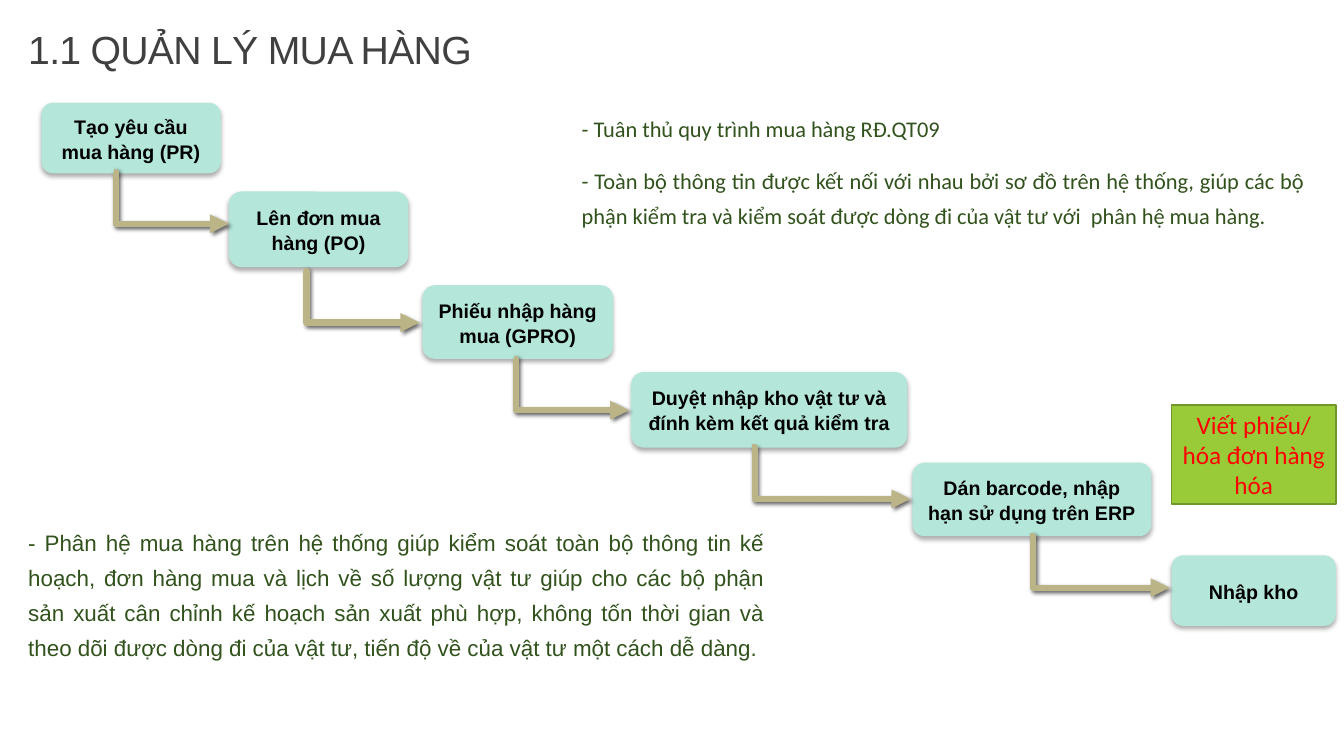
"""Build the purchasing-management process slide."""
from dataclasses import dataclass
from typing import Any

from lxml.etree import SubElement
from pptx import Presentation
from pptx.dml.color import RGBColor
from pptx.enum.shapes import MSO_CONNECTOR, MSO_SHAPE
from pptx.enum.text import MSO_ANCHOR, MSO_AUTO_SIZE, PP_ALIGN
from pptx.oxml.ns import qn
from pptx.util import Pt

PX = 9144


@dataclass(frozen=True)
class Theme:
    step: str = "B4E6DA"
    step_text: str = "000000"
    arrow: str = "BBB487"
    title: str = "404040"
    body: str = "31521C"
    callout: str = "99CB38"
    callout_line: str = "719629"
    callout_text: str = "FF0000"
    shadow: str = "000000"
    heading_font: str = "Arial"
    note_font: str = "Calibri"
    title_size: int = 28
    body_size: int = 16
    step_size: int = 14
    callout_size: int = 18


@dataclass(frozen=True)
class Box:
    left: int
    top: int
    width: int
    height: int
    text: str = ""


@dataclass(frozen=True)
class Arrow:
    left: int
    top: int
    width: int


@dataclass(frozen=True)
class Shadow:
    alpha: int
    blur: float
    dist: float
    angle: int


@dataclass(frozen=True)
class TextStyle:
    font: str
    size: int
    color: str
    para: dict[str, Any]
    bold: bool = False
    indent: int = 0


T = Theme()
ARROW_DROP = 51
STEP_SHADOW = Shadow(32, 3.5, 2.2, 90)
ARROW_SHADOW = Shadow(60, 3, 2, 45)

NOTE_PARA = {"alignment": PP_ALIGN.JUSTIFY, "line_spacing": 1.3,
             "space_before": Pt(6), "space_after": Pt(6)}
STEP_PARA = {"alignment": PP_ALIGN.CENTER, "line_spacing": 1.07, "space_after": Pt(8)}
TITLE_STYLE = TextStyle(T.heading_font, T.title_size, T.title,
                        {"alignment": PP_ALIGN.LEFT, "line_spacing": 0.85})
STEP_STYLE = TextStyle(T.heading_font, T.step_size, T.step_text, STEP_PARA, bold=True)
BODY_STYLE = TextStyle(T.heading_font, T.body_size, T.body, NOTE_PARA, indent=10)
NOTE_STYLE = TextStyle(T.note_font, T.body_size, T.body, NOTE_PARA, indent=10)
CALLOUT_STYLE = TextStyle(T.note_font, T.callout_size, T.callout_text,
                          {"alignment": PP_ALIGN.CENTER})

TITLE = Box(18, 19, 548, 66, "1.1 QUẢN LÝ MUA HÀNG")
BODY = Box(18, 495, 740, 182,
           "- Phân hệ mua hàng trên hệ thống giúp kiểm soát toàn bộ thông tin kế hoạch, "
           "đơn hàng mua và lịch về số lượng vật tư giúp cho các bộ phận sản xuất cân "
           "chỉnh kế hoạch sản xuất phù hợp, không tốn thời gian và theo dõi được dòng "
           "đi của vật tư, tiến độ về của vật tư một cách dễ dàng.")
NOTE = Box(567, 85, 727, 164,
           "- Tuân thủ quy trình mua hàng RĐ.QT09\n"
           "- Toàn bộ thông tin được kết nối với nhau bởi sơ đồ trên hệ thống, giúp các "
           "bộ phận kiểm tra và kiểm soát được dòng đi của vật tư với  phân hệ mua hàng.")
CALLOUT = Box(1162, 402, 163, 98, "Viết phiếu/ hóa đơn hàng hóa")
STEPS = [
    Box(41, 102, 178, 70, "Tạo yêu cầu mua hàng (PR)"),
    Box(227, 190, 178, 75, "Lên đơn mua hàng (PO)"),
    Box(419, 283, 189, 73, "Phiếu nhập hàng mua (GPRO)"),
    Box(626, 369, 274, 75, "Duyệt nhập kho vật tư và đính kèm kết quả kiểm tra"),
    Box(905, 459, 237, 73, "Dán barcode, nhập hạn sử dụng trên ERP"),
    Box(1162, 551, 163, 70, "Nhập kho"),
]
ARROWS = [
    Arrow(113, 171, 114),
    Arrow(302, 269, 114),
    Arrow(510, 356, 114),
    Arrow(746, 444, 157),
    Arrow(1022, 532, 138),
]


def place(sp: Any, box: Box) -> None:
    for name in ("left", "top", "width", "height"):
        setattr(sp, name, getattr(box, name) * PX)


def write(sp: Any, text: str, style: TextStyle, frame: dict[str, Any] | None = None) -> None:
    tf = sp.text_frame
    settings = {"word_wrap": True, "auto_size": MSO_AUTO_SIZE.NONE,
                "vertical_anchor": MSO_ANCHOR.MIDDLE, **(frame or {})}
    for name, value in settings.items():
        setattr(tf, name, value)
    tf.text = text
    font = {"name": style.font, "size": Pt(style.size), "bold": style.bold}
    for p in tf.paragraphs:
        for name, value in style.para.items():
            setattr(p, name, value)
        if style.indent:
            pPr = p._p.get_or_add_pPr()
            pPr.set("marL", str(style.indent * PX))
            pPr.set("indent", "0")
            SubElement(pPr, qn("a:buNone"))
        r = p.runs[0]
        for name, value in font.items():
            setattr(r.font, name, value)
        r.font.color.rgb = RGBColor.from_string(style.color)


def add_shadow(spPr: Any, shadow: Shadow) -> None:
    effects = spPr.find(qn("a:effectLst"))
    if effects is None:
        effects = SubElement(spPr, qn("a:effectLst"))
    outer = SubElement(effects, qn("a:outerShdw"), blurRad=str(Pt(shadow.blur)),
                       dist=str(Pt(shadow.dist)), dir=str(shadow.angle * 60000),
                       algn="ctr", rotWithShape="0")
    color = SubElement(outer, qn("a:srgbClr"), val=T.shadow)
    SubElement(color, qn("a:alpha"), val=str(shadow.alpha * 1000))


def add_box(s: Any, kind: MSO_SHAPE, box: Box, fill: str, style: TextStyle) -> Any:
    sp = s.shapes.add_shape(kind, 0, 0, 0, 0)
    place(sp, box)
    sp.shadow.inherit = False
    sp.fill.solid()
    sp.fill.fore_color.rgb = RGBColor.from_string(fill)
    sp.line.fill.background()
    write(sp, box.text, style)
    return sp


def add_arrow(s: Any, arrow: Arrow) -> None:
    cx = s.shapes.add_connector(
        MSO_CONNECTOR.ELBOW, arrow.left * PX, arrow.top * PX,
        (arrow.left + arrow.width) * PX, (arrow.top + ARROW_DROP) * PX)
    cx.line.width = Pt(4.5)
    cx.line.color.rgb = RGBColor.from_string(T.arrow)
    SubElement(cx.line._get_or_add_ln(), qn("a:tailEnd"), type="triangle")
    spPr = cx._element.spPr
    guides = spPr.find(qn("a:prstGeom")).find(qn("a:avLst"))
    SubElement(guides, qn("a:gd"), name="adj1", fmla="val 1700")
    add_shadow(spPr, ARROW_SHADOW)


def main() -> None:
    prs = Presentation()
    prs.slide_width, prs.slide_height = 1333 * PX, 750 * PX
    s = prs.slides.add_slide(prs.slide_layouts[1])

    title, body = s.placeholders
    place(title, TITLE)
    write(title, TITLE.text, TITLE_STYLE)
    title.text_frame.paragraphs[0].runs[0].font._element.set("spc", "-50")

    for step in STEPS:
        sp = add_box(s, MSO_SHAPE.ROUNDED_RECTANGLE, step, T.step, STEP_STYLE)
        add_shadow(sp._element.spPr, STEP_SHADOW)
    for arrow in ARROWS:
        add_arrow(s, arrow)

    flush = {"margin_left": 0, "margin_right": 0}
    place(body, BODY)
    write(body, BODY.text, BODY_STYLE, flush)
    note = s.shapes.add_textbox(0, 0, 0, 0)
    place(note, NOTE)
    write(note, NOTE.text, NOTE_STYLE, flush)

    callout = add_box(s, MSO_SHAPE.RECTANGLE, CALLOUT, T.callout, CALLOUT_STYLE)
    callout.line.color.rgb = RGBColor.from_string(T.callout_line)
    callout.line.width = Pt(1.25)
    prs.save("out.pptx")


if __name__ == "__main__":
    main()
